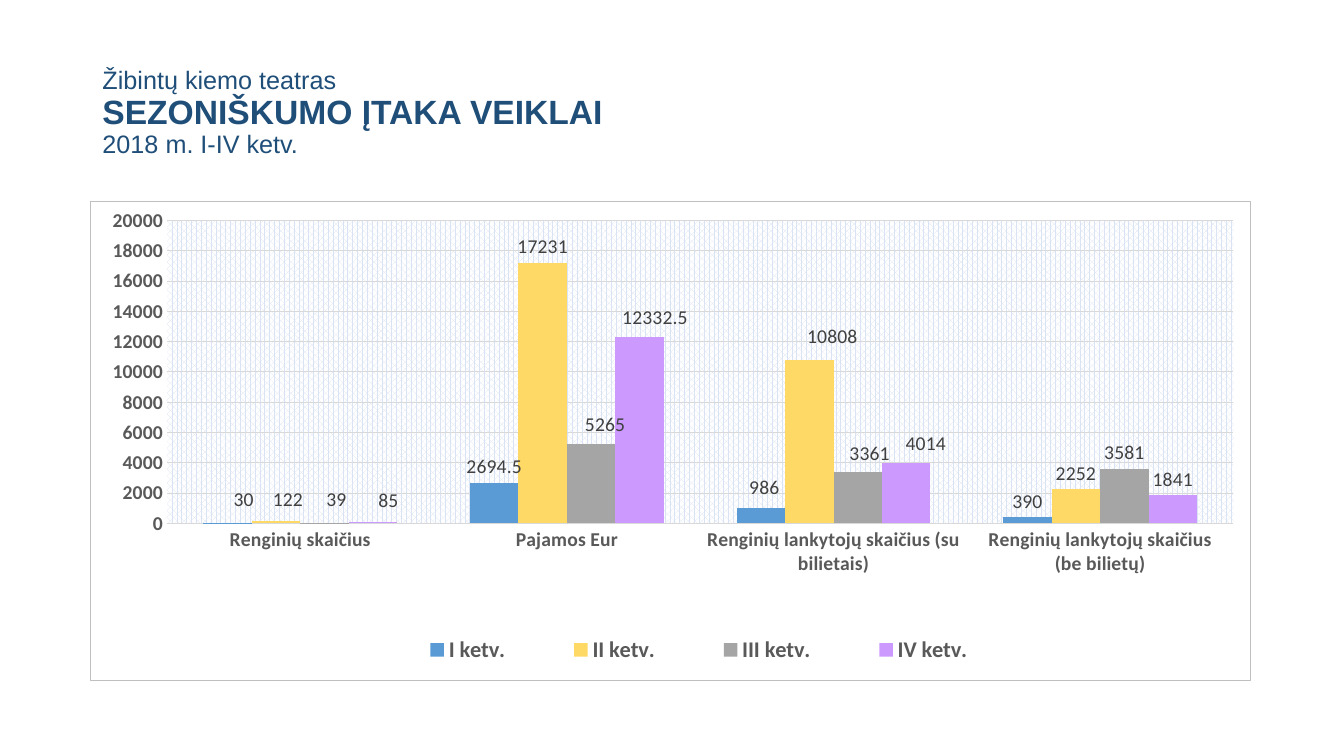
import copy
import dataclasses

import pptx
import pptx.chart.data
import pptx.dml.color
import pptx.enum.chart
import pptx.enum.text
import pptx.oxml
import pptx.oxml.ns
import pptx.util

Pt = pptx.util.Pt
qn = pptx.oxml.ns.qn


@dataclasses.dataclass(frozen=True)
class Theme:
    heading_font: str = "Arial"
    chart_font: str = "Calibri"
    heading: str = "1F4E79"
    axis_text: str = "595959"
    label_text: str = "404040"
    grid: str = "D9D9D9"
    border: str = "BFBFBF"
    pattern: str = "DAE3F3"
    background: str = "FFFFFF"
    series: tuple = ("5B9BD5", "FFD966", "A5A5A5", "CC99FF")
    heading_size: int = 24
    subheading_size: int = 18
    legend_size: int = 16
    chart_size: int = 14


THEME = Theme()

CHART_WIDTH, CHART_HEIGHT = 829, 343
CATEGORIES = (
    "Renginių skaičius",
    "Pajamos Eur",
    "Renginių lankytojų skaičius (su bilietais)",
    "Renginių lankytojų skaičius (be bilietų)",
)
QUARTERS = {
    "I ketv.": (30, 2694.5, 986, 390),
    "II ketv.": (122, 17231, 10808, 2252),
    "III ketv.": (39, 5265, 3361, 3581),
    "IV ketv.": (85, 12332.5, 4014, 1841),
}
# Label shifts per quarter: category index -> points right and down
LABEL_SHIFTS = (
    {0: (11.5, -5), 2: (2.5, -3.5)},
    {0: (8.5, -4), 2: (16.5, -5)},
    {0: (8.5, -5), 1: (10, -2), 2: (8.5, -2)},
    {0: (11, -3.5), 1: (11, -2), 2: (14, -2)},
)
NO_LEADER_LINES = (
    '<c:extLst><c:ext uri="{CE6537A1-D6FC-4f65-9D91-7224C49458BB}" '
    'xmlns:c15="http://schemas.microsoft.com/office/drawing/2012/chart">'
    '<c15:showLeaderLines val="0"/></c:ext></c:extLst>'
)


def rgb(color):
    return pptx.dml.color.RGBColor.from_string(color)


def format_font(font, size, color, name=THEME.chart_font, bold=False):
    font.name = name
    font.size = Pt(size)
    font.bold = bold
    font.color.rgb = rgb(color)


def add_text(paragraph, text, line_break=False, **font_format):
    """Add a run, and after it a line break of the same format if asked."""
    run = paragraph.add_run()
    run.text = text
    format_font(run.font, **font_format)
    if line_break:
        paragraph.add_line_break()
        paragraph._p[-1].append(copy.deepcopy(run._r.find(qn("a:rPr"))))


def chart_xml(content):
    namespaces = pptx.oxml.ns.nsdecls("c", "a")
    tag, rest = content.split(">", 1)
    return pptx.oxml.parse_xml(f"{tag} {namespaces}>{rest}")


def manual_layout(x, y, **values):
    """Build a c:layout; x and y are fractions, other values come before or after them."""
    before = {key: values.pop(key) for key in ("layoutTarget", "xMode", "yMode") if key in values}
    ordered = {**before, "x": x, "y": y, **values}
    children = "".join(f'<c:{key} val="{value}"/>' for key, value in ordered.items())
    return chart_xml(f"<c:layout><c:manualLayout>{children}</c:manualLayout></c:layout>")


def edge_layout(left, top, width, height, **target):
    """Place a chart part by points from the chart's top left corner."""
    return manual_layout(
        left / CHART_WIDTH, top / CHART_HEIGHT, xMode="edge", yMode="edge",
        w=width / CHART_WIDTH, h=height / CHART_HEIGHT, **target)


def remove_layout(element):
    for layout in element.findall(qn("c:layout")):
        element.remove(layout)


def add_title(slide):
    title = slide.shapes.title
    title.left, title.top, title.width, title.height = Pt(66), Pt(28.8), Pt(828), Pt(104.4)
    frame = title.text_frame
    frame.word_wrap = True
    frame.auto_size = pptx.enum.text.MSO_AUTO_SIZE.NONE
    frame.vertical_anchor = pptx.enum.text.MSO_ANCHOR.MIDDLE
    paragraph = frame.paragraphs[0]
    paragraph.alignment = pptx.enum.text.PP_ALIGN.LEFT
    paragraph.line_spacing = 0.9
    small = {"size": THEME.subheading_size, "color": THEME.heading, "name": THEME.heading_font}
    large = {**small, "size": THEME.heading_size, "bold": True}
    add_text(paragraph, "Žibintų kiemo teatras", line_break=True, **small)
    add_text(paragraph, "SEZONIŠKUMO ĮTAKA VEIKLAI ", line_break=True, **large)
    add_text(paragraph, "2018 m. I-IV ketv.", **small)


def format_axis(axis):
    axis.major_tick_mark = pptx.enum.chart.XL_TICK_MARK.NONE
    axis.minor_tick_mark = pptx.enum.chart.XL_TICK_MARK.NONE
    axis.format.line.fill.background()
    format_font(axis.tick_labels.font, THEME.chart_size, THEME.axis_text, bold=True)


def format_value_axis(axis):
    format_axis(axis)
    axis.minimum_scale, axis.maximum_scale, axis.major_unit = 0, 20000, 2000
    axis.has_major_gridlines = True
    line = axis.major_gridlines.format.line
    line.color.rgb = rgb(THEME.grid)
    line.width = Pt(0.75)


def format_series(series, color, shifts):
    outside_end = pptx.enum.chart.XL_LABEL_POSITION.OUTSIDE_END
    series.format.fill.solid()
    series.format.fill.fore_color.rgb = rgb(color)
    series.invert_if_negative = False
    labels = series.data_labels
    labels.show_value = True
    labels.position = outside_end
    format_font(labels.font, THEME.chart_size, THEME.label_text)
    for index, (right, down) in shifts.items():
        label = series.points[index].data_label
        format_font(label.font, THEME.chart_size, THEME.label_text)
        label.position = outside_end
        index_element = series._element.xpath(f"c:dLbls/c:dLbl/c:idx[@val='{index}']")[0]
        index_element.addnext(manual_layout(right / CHART_WIDTH, down / CHART_HEIGHT))
    series._element.find(qn("c:dLbls")).append(chart_xml(NO_LEADER_LINES))


def format_legend(chart):
    chart.has_legend = True
    legend = chart.legend
    legend.position = pptx.enum.chart.XL_LEGEND_POSITION.BOTTOM
    legend.include_in_layout = False
    format_font(legend.font, THEME.legend_size, THEME.axis_text, bold=True)
    remove_layout(legend._element)
    position = legend._element.find(qn("c:legendPos"))
    position.addnext(edge_layout(199, 305.5, 472, 31))


def format_areas(chart):
    """Place and pattern the plot area, and outline the whole chart."""
    chart_element = chart._chartSpace.find(qn("c:chart"))
    plot_area = chart_element.find(qn("c:plotArea"))
    remove_layout(plot_area)
    plot_area.insert(0, edge_layout(54.7, 13.7, 762.5, 216.7, layoutTarget="inner"))
    plot_area.append(chart_xml(
        '<c:spPr><a:pattFill prst="pct70">'
        f'<a:fgClr><a:srgbClr val="{THEME.pattern}"/></a:fgClr>'
        f'<a:bgClr><a:srgbClr val="{THEME.background}"/></a:bgClr>'
        "</a:pattFill><a:ln><a:noFill/></a:ln></c:spPr>"))
    chart_element.addnext(chart_xml(
        f'<c:spPr><a:solidFill><a:srgbClr val="{THEME.background}"/></a:solidFill>'
        f'<a:ln w="{Pt(0.75)}"><a:solidFill><a:srgbClr val="{THEME.border}"/>'
        "</a:solidFill></a:ln></c:spPr>"))


def add_quarter_chart(slide):
    data = pptx.chart.data.CategoryChartData()
    data.categories = CATEGORIES
    for quarter, values in QUARTERS.items():
        data.add_series(quarter, values)
    chart = slide.shapes.add_chart(
        pptx.enum.chart.XL_CHART_TYPE.COLUMN_CLUSTERED,
        Pt(64.3), Pt(143.6), Pt(CHART_WIDTH), Pt(CHART_HEIGHT), data).chart
    chart.has_title = False
    format_font(chart.font, THEME.chart_size, THEME.axis_text)
    plot = chart.plots[0]
    plot.gap_width = 150
    plot.overlap = 0
    plot.vary_by_categories = False
    for series, color, shifts in zip(plot.series, THEME.series, LABEL_SHIFTS):
        format_series(series, color, shifts)
    format_axis(chart.category_axis)
    format_value_axis(chart.value_axis)
    format_legend(chart)
    format_areas(chart)


def main():
    presentation = pptx.Presentation()
    presentation.slide_width, presentation.slide_height = Pt(960), Pt(540)
    slide = presentation.slides.add_slide(presentation.slide_layouts.get_by_name("Title Only"))
    add_title(slide)
    add_quarter_chart(slide)
    presentation.save("out.pptx")


if __name__ == "__main__":
    main()
